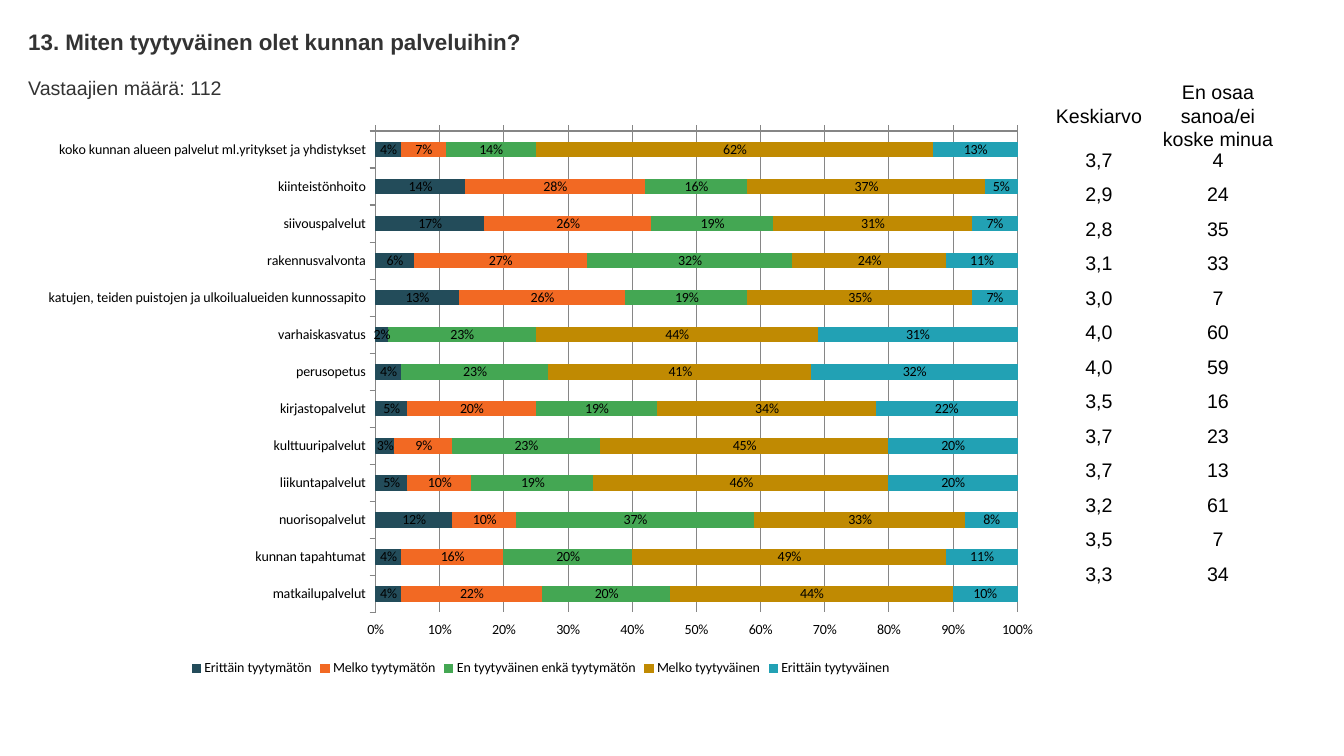
from pptx import Presentation
from pptx.chart.data import CategoryChartData
from pptx.dml.color import RGBColor
from pptx.enum.chart import (XL_CHART_TYPE, XL_LABEL_POSITION, XL_LEGEND_POSITION,
                             XL_TICK_LABEL_POSITION, XL_TICK_MARK)
from pptx.enum.text import MSO_ANCHOR, MSO_AUTO_SIZE, PP_ALIGN
from pptx.util import Cm, Pt

STACKED_BAR = XL_CHART_TYPE.BAR_STACKED
LABEL_CENTER = XL_LABEL_POSITION.CENTER
LEGEND_BOTTOM = XL_LEGEND_POSITION.BOTTOM
LABELS_LOW, LABELS_HIGH = XL_TICK_LABEL_POSITION.LOW, XL_TICK_LABEL_POSITION.HIGH
TICK_OUTSIDE, TICK_NONE = XL_TICK_MARK.OUTSIDE, XL_TICK_MARK.NONE
TOP, MIDDLE = MSO_ANCHOR.TOP, MSO_ANCHOR.MIDDLE
LEFT, CENTER = PP_ALIGN.LEFT, PP_ALIGN.CENTER
FIT_SHAPE, FIT_NONE = MSO_AUTO_SIZE.SHAPE_TO_FIT_TEXT, MSO_AUTO_SIZE.NONE

COLORS = {"heading": "333333", "text": "000000", "grid": "868686"}
TITLE_ONLY = 5

# Service: answer shares in percent, mean, number of "cannot say" answers
SERVICES = [
    ("koko kunnan alueen palvelut ml.yritykset ja yhdistykset", (4, 7, 14, 62, 13), "3,7", "4"),
    ("kiinteistönhoito", (14, 28, 16, 37, 5), "2,9", "24"),
    ("siivouspalvelut", (17, 26, 19, 31, 7), "2,8", "35"),
    ("rakennusvalvonta", (6, 27, 32, 24, 11), "3,1", "33"),
    ("katujen, teiden puistojen ja ulkoilualueiden kunnossapito", (13, 26, 19, 35, 7), "3,0", "7"),
    ("varhaiskasvatus", (2, 0, 23, 44, 31), "4,0", "60"),
    ("perusopetus", (4, 0, 23, 41, 32), "4,0", "59"),
    ("kirjastopalvelut", (5, 20, 19, 34, 22), "3,5", "16"),
    ("kulttuuripalvelut", (3, 9, 23, 45, 20), "3,7", "23"),
    ("liikuntapalvelut", (5, 10, 19, 46, 20), "3,7", "13"),
    ("nuorisopalvelut", (12, 10, 37, 33, 8), "3,2", "61"),
    ("kunnan tapahtumat", (4, 16, 20, 49, 11), "3,5", "7"),
    ("matkailupalvelut", (4, 22, 20, 44, 10), "3,3", "34"),
]
ANSWERS = {
    "Erittäin tyytymätön": "234C5A",
    "Melko tyytymätön": "F26923",
    "En tyytyväinen enkä tyytymätön": "44A753",
    "Melko tyytyväinen": "C08A02",
    "Erittäin tyytyväinen": "22A1B4",
}


def apply(target, values):
    for name, value in values.items():
        setattr(target, name, value)


class SurveySlide:
    def __init__(self, presentation):
        self.slide = presentation.slides.add_slide(presentation.slide_layouts[TITLE_ONLY])
        self.text_font, self.chart_font = "Arial", "Calibri"

    def style_font(self, font, name, size, color, bold=False):
        apply(font, {"name": name, "size": Pt(size), "bold": bold})
        font.color.rgb = RGBColor.from_string(color)

    def fill_text(self, shape, text, size, color, bold=False, align=LEFT):
        frame = shape.text_frame
        apply(frame, {"text": text, "word_wrap": True})
        paragraph = frame.paragraphs[0]
        paragraph.alignment = align
        self.style_font(paragraph.font, self.text_font, size, color, bold)

    def heading(self, shape, text, size, bold=False):
        self.fill_text(shape, text, size, COLORS["heading"], bold)
        apply(shape.text_frame, {"margin_left": 0, "margin_right": 0, "margin_top": 0,
                                 "margin_bottom": 0, "vertical_anchor": TOP,
                                 "auto_size": FIT_SHAPE})

    def title(self, text, left, top, width, height):
        shape = self.slide.shapes.title
        apply(shape, {"left": Cm(left), "top": Cm(top), "width": Cm(width), "height": Cm(height)})
        self.heading(shape, text, 16, bold=True)

    def subtitle(self, text, left, top, width, height):
        shape = self.slide.shapes.add_textbox(Cm(left), Cm(top), Cm(width), Cm(height))
        self.heading(shape, text, 14)

    def column_entry(self, text, left, top, width, height):
        shape = self.slide.shapes.add_textbox(Cm(left), Cm(top), Cm(width), Cm(height))
        self.fill_text(shape, text, 14, COLORS["text"], align=CENTER)
        apply(shape.text_frame, {"vertical_anchor": MIDDLE, "auto_size": FIT_NONE})

    def column(self, header, entries, left):
        width, first_top, row_height = 3.53, 3.58, 0.87
        self.column_entry(header, left, 2.59, width, 0.64)
        for row, entry in enumerate(entries):
            self.column_entry(entry, left, first_top + row * row_height, width, row_height)

    def chart(self, left, top, width, height):
        data = CategoryChartData(number_format="0%")
        data.categories = [service[0] for service in SERVICES]
        for index, answer in enumerate(ANSWERS):
            data.add_series(answer, [service[1][index] / 100 for service in SERVICES])
        chart = self.slide.shapes.add_chart(
            STACKED_BAR, Cm(left), Cm(top), Cm(width), Cm(height), data).chart
        apply(chart, {"has_title": False, "has_legend": True})
        self.style_font(chart.font, self.chart_font, 10, COLORS["text"])
        apply(chart.legend, {"position": LEGEND_BOTTOM, "include_in_layout": False})

        # Bars; the label format leaves zero shares blank
        plot = chart.plots[0]
        apply(plot, {"gap_width": 150, "overlap": 100, "vary_by_categories": False,
                     "has_data_labels": True})
        apply(plot.data_labels, {"show_value": True, "number_format": "0%;;",
                                 "number_format_is_linked": False, "position": LABEL_CENTER})
        for series, color in zip(plot.series, ANSWERS.values()):
            series.format.fill.solid()
            series.format.fill.fore_color.rgb = RGBColor.from_string(color)
            series.format.line.color.rgb = RGBColor.from_string(color)
            series.format.line.width = Pt(0.75)

        # Axes: services run downwards, percentages stand below the bars
        services, shares = chart.category_axis, chart.value_axis
        apply(services, {"reverse_order": True, "tick_label_position": LABELS_LOW})
        apply(shares, {"minimum_scale": 0, "maximum_scale": 1, "major_unit": 0.1,
                       "has_major_gridlines": True, "tick_label_position": LABELS_HIGH})
        apply(shares.tick_labels, {"number_format": "0%", "number_format_is_linked": False})
        for axis in (services, shares):
            apply(axis, {"major_tick_mark": TICK_OUTSIDE, "minor_tick_mark": TICK_NONE})
        for line in (services.format.line, shares.format.line, shares.major_gridlines.format.line):
            line.color.rgb = RGBColor.from_string(COLORS["grid"])
            line.width = Pt(0.75)


def main():
    presentation = Presentation()
    apply(presentation, {"slide_width": Cm(33.87), "slide_height": Cm(19.05)})
    survey = SurveySlide(presentation)

    # Headings
    survey.title("13. Miten tyytyväinen olet kunnan palveluihin?", 0.71, 0.71, 32.46, 0.69)
    survey.subtitle("Vastaajien määrä: 112", 0.71, 1.91, 32.46, 0.58)

    # Answer shares and the figures beside them
    survey.chart(0.71, 3.02, 25.83, 14.12)
    survey.column("En osaa sanoa/ei koske minua", [service[3] for service in SERVICES], 28.93)
    survey.column("Keskiarvo", [service[2] for service in SERVICES], 25.93)

    presentation.save("out.pptx")


if __name__ == "__main__":
    main()
